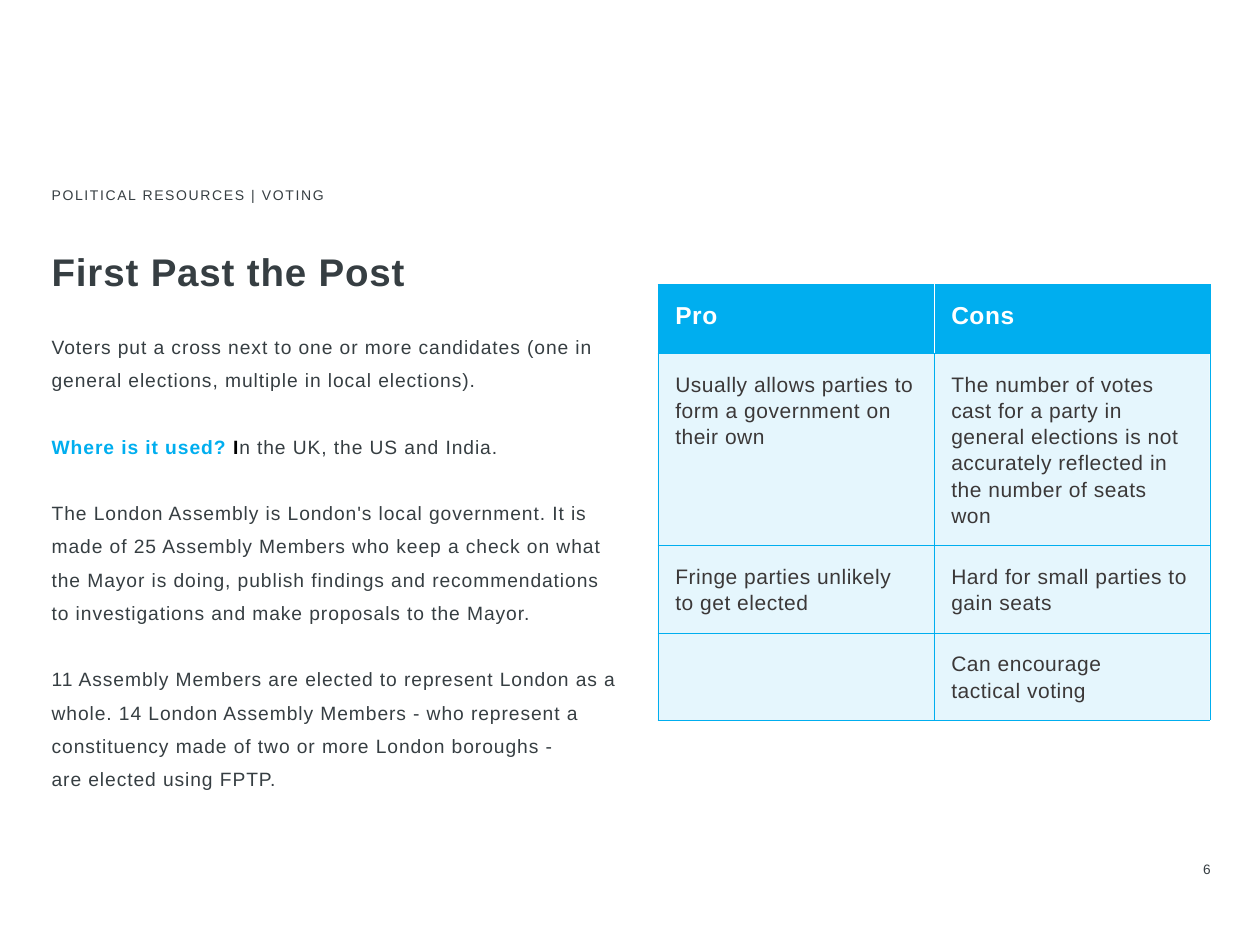
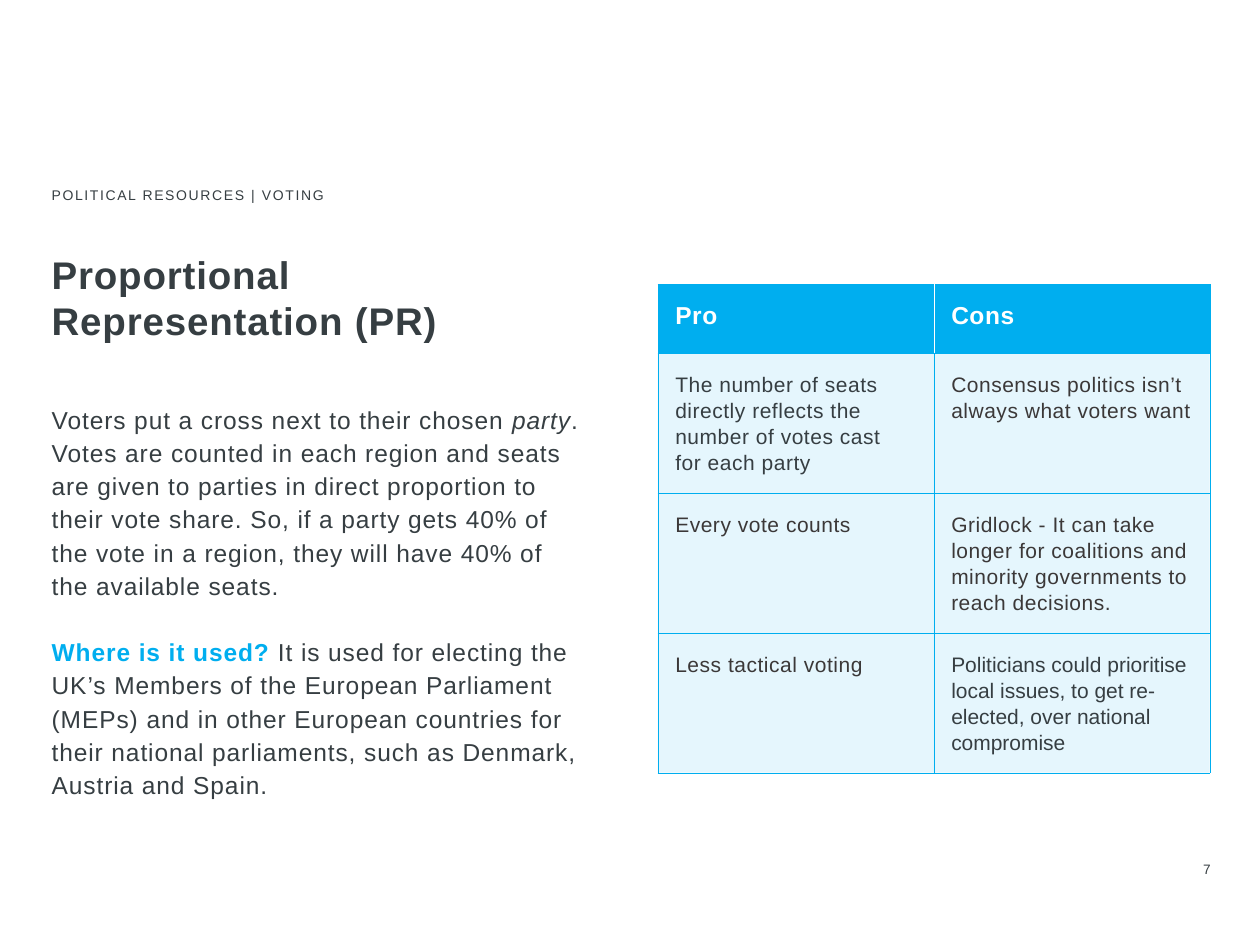
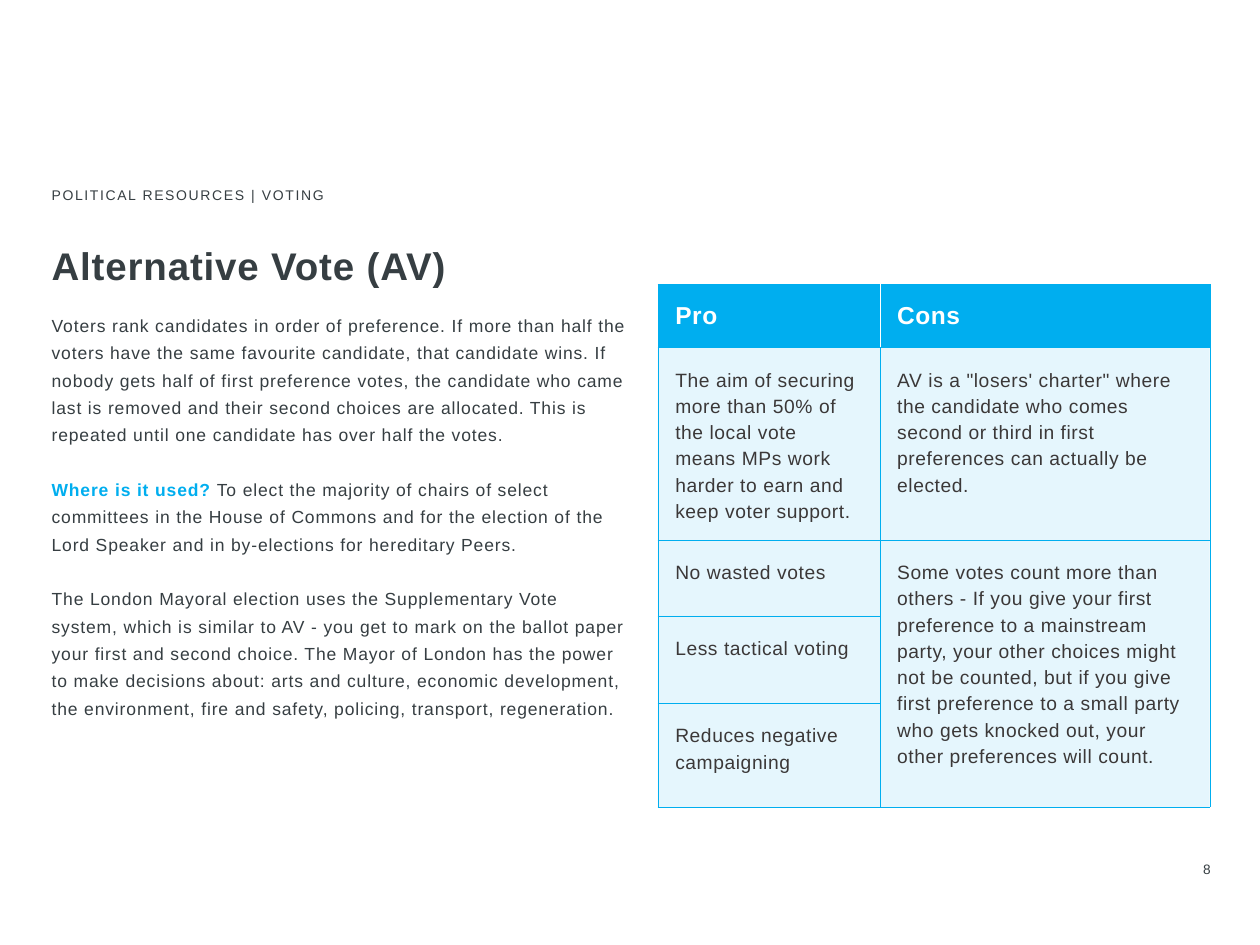
from lxml import etree
from pptx import Presentation
from pptx.dml.color import RGBColor
from pptx.enum import text
from pptx.oxml.ns import qn
from pptx.util import Pt

# Shared look
FONT = "Arial"
SLATE, CHARCOAL, CYAN, WHITE, BLACK = "363E42", "3B3838", "00AEEF", "FFFFFF", "000000"
LEFT, TITLE_W = 29.5, 315.4
TABLE_LEFT, TABLE_TOP, CELL_MARGIN = 375.9, 162.6, 10
EYEBROW = "POLITICAL RESOURCES | VOTING"
HEADINGS = ("Pro", "Cons")
USED = ("Where is it used? ", {"color": CYAN, "bold": True})

# Content: a paragraph or cell is a string, or a list of strings and (string, style) pairs
SLIDES = [
    {
        "number": 6,
        "title": "First Past the Post", "title_box": (141.8, 32.4),
        "body_box": (185.8, 324.7, 287.3), "size": 11, "spacing": Pt(19), "gap": 19,
        "body": [
            "Voters put a cross next to one or more candidates (one in general elections, "
            "multiple in local elections).",
            [USED, ("I", {"color": BLACK, "bold": True}), "n the UK, the US and India."],
            "The London Assembly is London's local government. It is made of 25 Assembly Members "
            "who keep a check on what the Mayor is doing, publish findings and recommendations to "
            "investigations and make proposals to the Mayor.",
            "11 Assembly Members are elected to represent London as a whole. 14 London Assembly "
            "Members - who represent a constituency made of two or more London boroughs -\n"
            "are elected using FPTP.",
        ],
        "cols": (157.7, 157.7), "rows": (39, 110, 50, 50), "cell_size": 12,
        "cells": [
            ("Usually allows parties to form a government on their own",
             "The number of votes cast for a party in general elections is not accurately "
             "reflected in the number of seats won"),
            ("Fringe parties unlikely to get elected", "Hard for small parties to gain seats"),
            ("", "Can encourage\ntactical voting"),
        ],
    },
    {
        "number": 7,
        "title": "Proportional\nRepresentation (PR)", "title_box": (143.3, 67.7),
        "body_box": (229, 315.4, 234), "size": 14, "spacing": Pt(19), "gap": 19,
        "body": [
            ["Voters put a cross next to their chosen ", ("party", {"italic": True}),
             ". Votes are counted in each region and seats\nare given to parties in direct "
             "proportion to\ntheir vote share. So, if a party gets 40% of\nthe vote in a region, "
             "they will have 40% of\nthe available seats."],
            [USED, "It is used for electing the UK’s Members of the European Parliament (MEPs) "
             "and in other European countries for their national parliaments, such as Denmark, "
             "Austria and Spain."],
        ],
        "cols": (157.7, 157.7), "rows": (39, 80, 80, 80), "cell_size": 12,
        "cells": [
            ([("The number of seats directly reflects the number of votes cast\nfor each party",
               {"color": SLATE})],
             "Consensus politics isn’t always what voters want"),
            ("Every vote counts",
             "Gridlock - It can take longer for coalitions and minority governments to reach "
             "decisions."),
            ("Less tactical voting",
             [("Politicians could prioritise local issues, to get re-elected, over national "
               "compromise", {"color": SLATE, "track": 0})]),
        ],
    },
    {
        "number": 8,
        "title": "Alternative Vote (AV)", "title_box": (138.2, 31.7),
        "body_box": (176.4, 330.5, 300.2), "size": 10, "spacing": 1.3, "gap": 15.6,
        "body": [
            "Voters rank candidates in order of preference. If more than half the voters have the "
            "same favourite candidate, that candidate wins. If nobody gets half of first "
            "preference votes, the candidate who came last is removed and their second choices "
            "are allocated. This is repeated until one candidate has over half the votes.",
            [USED, "To elect the majority of chairs of select committees in the House of Commons "
             "and for the election of the Lord Speaker and in by-elections for hereditary Peers."],
            "The London Mayoral election uses the Supplementary Vote system, which is similar to "
            "AV - you get to mark on the ballot paper your first and second choice. The Mayor of "
            "London has the power to make decisions about: arts and culture, economic "
            "development, the environment, fire and safety, policing, transport, regeneration.",
        ],
        "cols": (126.8, 188.6), "rows": (36, 110, 43.3, 50, 59.2), "cell_size": 11,
        "cells": [
            ("The aim of securing more than 50% of the local vote means MPs work harder to earn "
             "and keep voter support.",
             "AV is a \"losers' charter\" where the candidate who comes second or third in first "
             "preferences can actually be elected."),
            ("No wasted votes",
             "Some votes count more than others - If you give your first preference to a "
             "mainstream party, your other choices might not be counted, but if you give first "
             "preference to a small party who gets knocked out, your other preferences will "
             "count."),
            ("Less tactical voting", None),
            ("Reduces negative campaigning", None),
        ],
    },
]


def rgb(value):
    return RGBColor.from_string(value)


def style_run(r, size, color=SLATE, bold=False, italic=False, track=0.5):
    f = r.font
    f.name, f.size, f.bold, f.italic = FONT, Pt(size), bold, italic
    f.color.rgb = rgb(color)
    r._r.get_or_add_rPr().set("spc", str(round(track * 100)))


def write(p, content, size, **base):
    """Fill a paragraph with styled runs; a newline becomes a line break."""
    for part in [content] if isinstance(content, str) else content:
        words, style = (part, {}) if isinstance(part, str) else part
        for i, line in enumerate(words.split("\n")):
            if i:
                p.add_line_break()
            if line:
                r = p.add_run()
                r.text = line
                style_run(r, size, **{**base, **style})


def place(sp, left, top, width, height):
    """Position a text shape and clear its margins."""
    sp.left, sp.top, sp.width, sp.height = map(Pt, (left, top, width, height))
    tf = sp.text_frame
    tf.margin_left = tf.margin_right = tf.margin_top = tf.margin_bottom = 0
    tf.word_wrap = True
    tf.auto_size = text.MSO_AUTO_SIZE.NONE
    tf.vertical_anchor = text.MSO_ANCHOR.TOP
    return tf


def add_label(s, box, words, size, track, align):
    p = place(s.shapes.add_textbox(0, 0, 0, 0), *box).paragraphs[0]
    p.alignment = align
    write(p, words, size, track=track)


def fill_body(tf, d):
    for i, content in enumerate(d["body"]):
        p = tf.add_paragraph() if i else tf.paragraphs[0]
        pPr = p._p.get_or_add_pPr()
        pPr.set("marL", "0")
        pPr.set("indent", "0")
        etree.SubElement(pPr, qn("a:buNone"))
        p.line_spacing = d["spacing"]
        p.space_before = Pt(d["gap"] if i else 0)
        write(p, content, d["size"])


def set_borders(cell, colors):
    tcPr = cell._tc.get_or_add_tcPr()
    for side, color in zip("LRTB", colors):
        ln = etree.SubElement(tcPr, qn(f"a:ln{side}"), w=str(Pt(0.25)))
        solid = etree.SubElement(ln, qn("a:solidFill"))
        etree.SubElement(solid, qn("a:srgbClr"), val=color)


def add_comparison(s, d):
    cols, rows = d["cols"], d["rows"]
    table = s.shapes.add_table(len(rows), len(cols), Pt(TABLE_LEFT), Pt(TABLE_TOP),
                               Pt(sum(cols)), Pt(sum(rows))).table
    table.horz_banding = False
    for col, width in zip(table.columns, cols):
        col.width = Pt(width)
    for row, height in zip(table.rows, rows):
        row.height = Pt(height)

    for i, contents in enumerate([HEADINGS] + d["cells"]):
        for j, content in enumerate(contents):
            cell, header = table.cell(i, j), i == 0
            cell.margin_left = cell.margin_right = Pt(CELL_MARGIN)
            cell.margin_top = cell.margin_bottom = Pt(CELL_MARGIN)
            # White divider between the two headings
            set_borders(cell, (WHITE if header and j == 1 else CYAN,
                               WHITE if header and j == 0 else CYAN, CYAN, CYAN))
            cell.fill.solid()
            cell.fill.fore_color.rgb = rgb(CYAN)
            p = cell.text_frame.paragraphs[0]
            if header:
                write(p, content, 14, color=WHITE, bold=True, track=0.3)
                continue
            clr = cell._tc.tcPr.find(f"{qn('a:solidFill')}/{qn('a:srgbClr')}")
            etree.SubElement(clr, qn("a:alpha"), val="10000")
            p.line_spacing = Pt(15)
            write(p, content or "", d["cell_size"], color=CHARCOAL, track=0.3)

    # A None cell continues the cell above it
    for j in range(len(cols)):
        spanned = [i for i, c in enumerate(d["cells"], 1) if c[j] is None]
        if spanned:
            table.cell(spanned[0] - 1, j).merge(table.cell(spanned[-1], j))


def build_slide(prs, d):
    s = prs.slides.add_slide(prs.slide_layouts[1])
    add_label(s, (LEFT, 106.6, 504, 14.4), EYEBROW, 8, 0.9, text.PP_ALIGN.LEFT)
    add_label(s, (606.2, 491.9, 85.7, 10), str(d["number"]), 7.8, 0.5, text.PP_ALIGN.RIGHT)

    top, height = d["title_box"]
    p = place(s.shapes.title, LEFT, top, TITLE_W, height).paragraphs[0]
    p.alignment = text.PP_ALIGN.LEFT
    write(p, d["title"], 22, bold=True)

    top, width, height = d["body_box"]
    fill_body(place(s.placeholders[1], LEFT, top, width, height), d)
    add_comparison(s, d)


def main():
    prs = Presentation()
    prs.slide_width, prs.slide_height = Pt(720), Pt(540)
    for d in SLIDES:
        build_slide(prs, d)
    prs.save("out.pptx")


if __name__ == "__main__":
    main()
